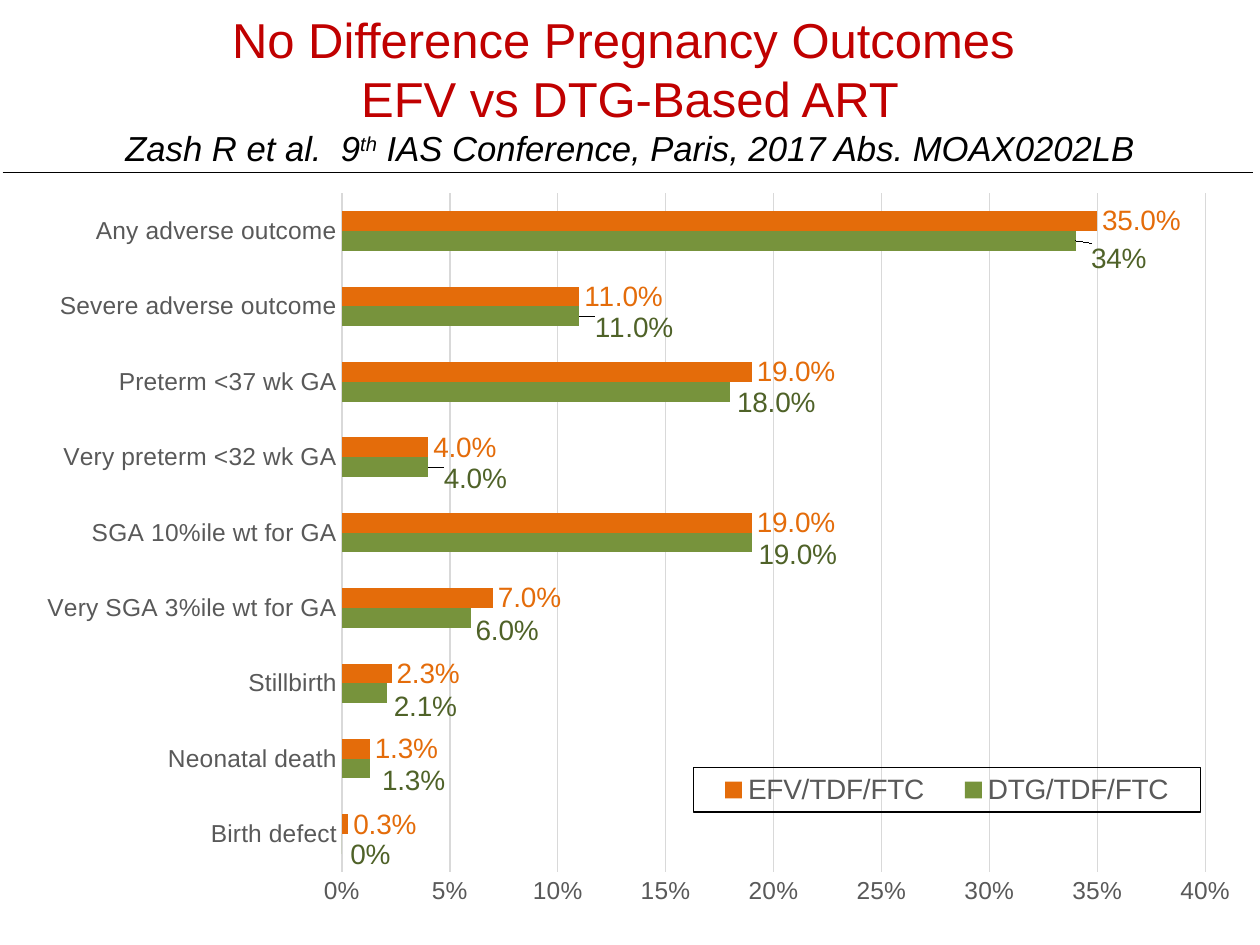
from dataclasses import dataclass

from lxml.etree import SubElement
from pptx import Presentation
from pptx.chart.data import CategoryChartData
from pptx.dml.color import RGBColor
from pptx.enum.chart import XL_CHART_TYPE as CT, XL_LABEL_POSITION as LP
from pptx.enum.chart import XL_LEGEND_POSITION as LG, XL_TICK_MARK as TM
from pptx.enum.shapes import MSO_CONNECTOR as MC
from pptx.enum.text import MSO_ANCHOR, MSO_AUTO_SIZE, PP_ALIGN
from pptx.oxml import parse_xml
from pptx.oxml.ns import nsdecls, qn
from pptx.util import Pt


@dataclass(frozen=True)
class Theme:
    font: str = "Arial"
    title: str = "C00000"
    ink: str = "000000"
    axis: str = "595959"
    grid: str = "D9D9D9"
    efv: str = "E46C0A"
    dtg: str = "77933C"
    dtg_label: str = "4F6228"
    title_size: float = 28
    cite_size: float = 19.8
    axis_size: float = 14
    label_size: float = 16
    hairline: float = 0.75


# outcome, DTG, EFV, DTG label shift right and down in points, DTG label format
OUTCOMES = [
    ("Birth defect", 0, 0.003, 2, 6, "0%"),
    ("Neonatal death", 0.013, 0.013, 4, 7, "0.0%"),
    ("Stillbirth", 0.021, 0.023, 1, 7.5, "0.0%"),
    ("Very SGA 3%ile wt for GA", 0.06, 0.07, -0.5, 7.5, "0.0%"),
    ("SGA 10%ile wt for GA", 0.19, 0.19, 1, 7, "0.0%"),
    ("Very preterm <32 wk GA", 0.04, 0.04, 6, 6.5, "0.0%"),
    ("Preterm <37 wk GA", 0.18, 0.19, 1, 6.5, "0.0%"),
    ("Severe adverse outcome", 0.11, 0.11, 6, 6.5, "0.0%"),
    ("Any adverse outcome", 0.34, 0.35, 6, 10, "0%"),
]


def rgb(color):
    return RGBColor.from_string(color)


def set_font(font, name, size, color, italic=None):
    font.name, font.size, font.italic = name, Pt(size), italic
    font.color.rgb = rgb(color)


def add_text(p, text, raised=False, **fmt):
    """Append a run to p; a newline in text becomes a line break."""
    for i, line in enumerate(text.split("\n")):
        if i:
            p.add_line_break()
        if line:
            r = p.add_run()
            r.text = line
            set_font(r.font, **fmt)
            if raised:
                r._r.get_or_add_rPr().set("baseline", "30000")


def layout_xml(x, y, w=None, h=None, inner=False):
    """Manual chart layout in fractions; without a size, x and y are offsets."""
    values = {"x": x, "y": y}
    tags = ""
    if w is not None:
        values.update(w=w, h=h)
        tags = '<c:layoutTarget val="inner"/>' if inner else ""
        tags += '<c:xMode val="edge"/><c:yMode val="edge"/>'
    tags += "".join(f'<c:{k} val="{v:.4f}"/>' for k, v in values.items())
    return parse_xml(f'<c:layout {nsdecls("c")}><c:manualLayout>{tags}'
                     '</c:manualLayout></c:layout>')


class Slide:
    """Holds the theme and the slide being built; lengths are in points."""

    def __init__(self, prs, theme):
        self.theme = theme
        self.slide = prs.slides.add_slide(prs.slide_layouts[5])

    def title(self, box, pieces):
        sp = self.slide.shapes.title
        sp.left, sp.top, sp.width, sp.height = map(Pt, box)
        tf = sp.text_frame
        tf.word_wrap, tf.auto_size = True, MSO_AUTO_SIZE.NONE
        tf.vertical_anchor = MSO_ANCHOR.MIDDLE
        p = tf.paragraphs[0]
        p.alignment = PP_ALIGN.CENTER
        for text, fmt in pieces:
            add_text(p, text, name=self.theme.font, **fmt)

    def rule(self, x1, y1, x2, y2):
        line = self.slide.shapes.add_connector(MC.STRAIGHT, *map(Pt, (x1, y1, x2, y2)))
        self.stroke(line.line, self.theme.ink)
        SubElement(line._element.spPr, qn("a:effectLst"))

    def stroke(self, line, color):
        line.color.rgb, line.width = rgb(color), Pt(self.theme.hairline)

    def bar_chart(self, box, plot, legend):
        t = self.theme
        data = CategoryChartData(number_format="0.0%")
        data.categories = [row[0] for row in OUTCOMES]
        data.add_series("DTG/TDF/FTC", [row[1] for row in OUTCOMES])
        data.add_series("EFV/TDF/FTC", [row[2] for row in OUTCOMES])
        chart = self.slide.shapes.add_chart(CT.BAR_CLUSTERED, *map(Pt, box), data).chart
        chart.has_title = False
        set_font(chart.font, t.font, t.axis_size, t.ink)
        bars = chart.plots[0]
        bars.gap_width, bars.overlap, bars.vary_by_categories = 182, 0, False
        dtg, efv = bars.series
        self.series(dtg, t.dtg, t.dtg_label)
        self.series(efv, t.efv, t.efv)
        self.shift_labels(dtg, box)
        self.axes(chart)
        self.legend(chart, legend)
        area = chart._chartSpace.chart.plotArea
        for old in area.findall(qn("c:layout")):
            area.remove(old)
        area.insert(0, layout_xml(*plot, inner=True))

    def series(self, series, color, label_color):
        series.format.fill.solid()
        series.format.fill.fore_color.rgb = rgb(color)
        series.invert_if_negative = False
        labels = series.data_labels
        labels.show_value, labels.position = True, LP.OUTSIDE_END
        labels.number_format, labels.number_format_is_linked = "0.0%", False
        set_font(labels.font, self.theme.font, self.theme.label_size, label_color)

    def shift_labels(self, series, box):
        for i, (*_, dx, dy, code) in enumerate(OUTCOMES):
            label = series.points[i].data_label
            set_font(label.font, self.theme.font, self.theme.label_size,
                     self.theme.dtg_label)
            label.position = LP.OUTSIDE_END
            node = series.data_labels._element.findall(qn("c:dLbl"))[i]
            node.insert(1, layout_xml(dx / box[2], dy / box[3]))
            node.insert(2, parse_xml(f'<c:numFmt {nsdecls("c")} formatCode="{code}" '
                                     'sourceLinked="0"/>'))

    def axes(self, chart):
        t = self.theme
        cat, val = chart.category_axis, chart.value_axis
        for axis in (cat, val):
            axis.major_tick_mark = axis.minor_tick_mark = TM.NONE
            set_font(axis.tick_labels.font, t.font, t.axis_size, t.axis)
        self.stroke(cat.format.line, t.grid)
        val.format.line.fill.background()
        val.minimum_scale, val.maximum_scale, val.major_unit = 0, 0.4, 0.05
        val.tick_labels.number_format = "0%"
        val.tick_labels.number_format_is_linked = False
        self.stroke(val.major_gridlines.format.line, t.grid)

    def legend(self, chart, place):
        t = self.theme
        chart.has_legend = True
        legend = chart.legend
        legend.position, legend.include_in_layout = LG.TOP, False
        set_font(legend.font, t.font, t.label_size, t.axis)
        node = legend._element
        for old in node.findall(qn("c:layout")):
            node.remove(old)
        node.find(qn("c:legendPos")).addnext(layout_xml(*place))
        node.find(qn("c:txPr")).addprevious(parse_xml(
            f'<c:spPr {nsdecls("c", "a")}><a:ln w="{Pt(t.hairline)}"><a:solidFill>'
            f'<a:srgbClr val="{t.ink}"/></a:solidFill></a:ln></c:spPr>'))


def main():
    prs = Presentation()
    prs.slide_width, prs.slide_height = Pt(720), Pt(540)
    theme = Theme()
    s = Slide(prs, theme)
    head = dict(size=theme.title_size, color=theme.title)
    cite = dict(size=theme.cite_size, color=theme.ink, italic=True)
    s.title((36, 6, 648, 90), [
        ("No Difference Pregnancy Outcomes \nEFV vs DTG-Based ART\n", head),
        ("Zash R et al.  9", cite),
        ("th", dict(cite, raised=True)),
        (" IAS Conference, Paris, 2017 Abs. MOAX0202LB", cite),
    ])
    s.bar_chart((1.5, 84.25, 707.75, 444.25), plot=(0.274, 0.059, 0.697, 0.873),
                legend=(0.558, 0.798, 0.409, 0.057))
    s.rule(1.5, 98.75, 715.75, 98.75)
    prs.save("out.pptx")


if __name__ == "__main__":
    main()
